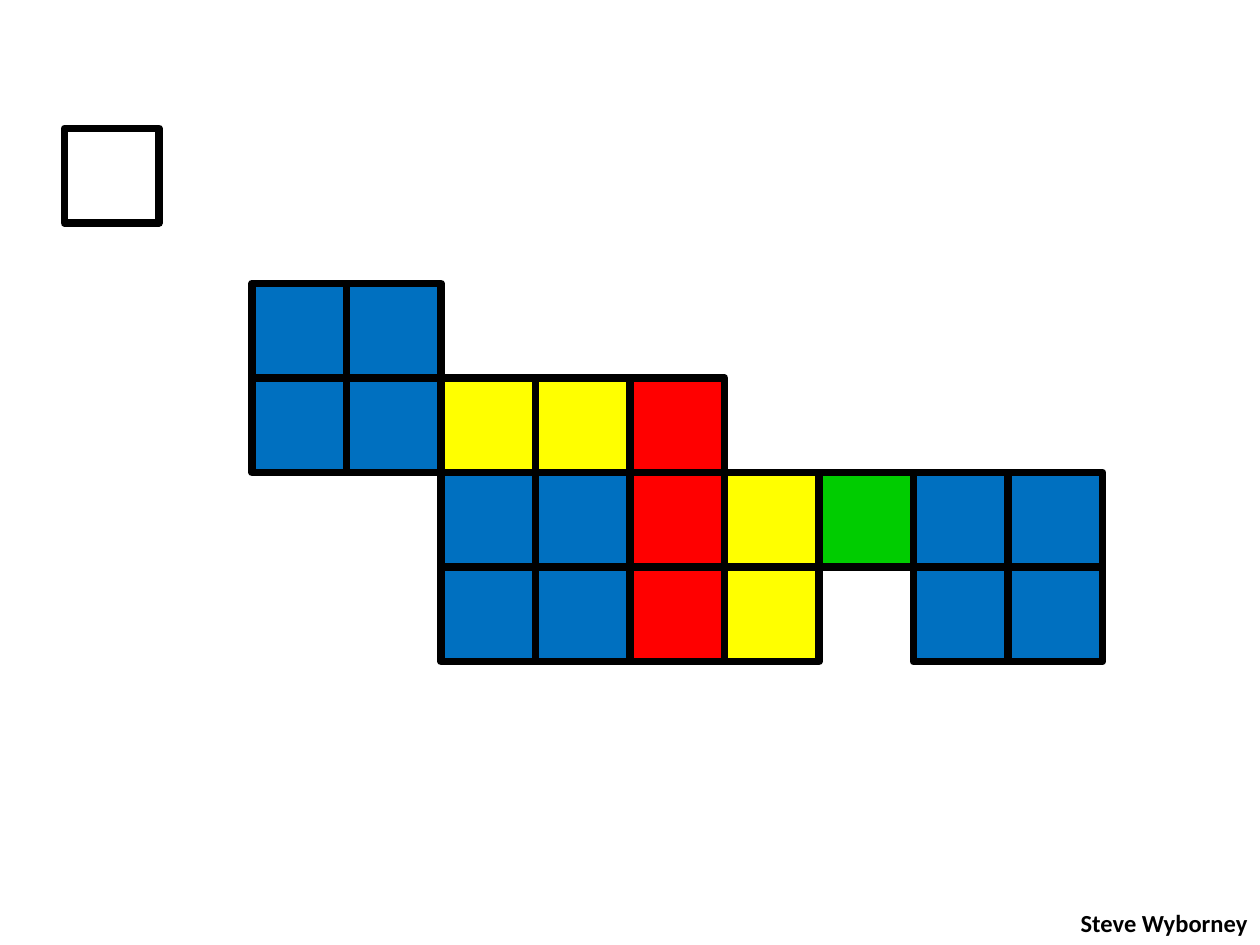
import dataclasses

import pptx
import pptx.dml.color
import pptx.enum.shapes
import pptx.enum.text
import pptx.util

Cm = pptx.util.Cm
Pt = pptx.util.Pt
RGB = pptx.dml.color.RGBColor.from_string


@dataclasses.dataclass(frozen=True)
class Theme:
    font: str = "Calibri"
    credit_size: float = 14
    piece_line: float = 2
    grid_line: float = 4.5
    black: str = "000000"
    white: str = "FFFFFF"
    blue: str = "0070C0"
    yellow: str = "FFFF00"
    green: str = "00CC00"
    red: str = "FF0000"


THEME = Theme()
UNIT = Cm(7.62) // 4  # side of one square

# Coloured pieces: column, row, columns wide, rows high, colour
PIECES = [
    (0, 0, 2, 2, THEME.blue),
    (2, 1, 2, 1, THEME.yellow),
    (6, 2, 1, 1, THEME.green),
    (5, 2, 1, 2, THEME.yellow),
    (4, 1, 1, 3, THEME.red),
    (2, 2, 2, 2, THEME.blue),
    (7, 2, 2, 2, THEME.blue),
]


def add_block(shapes, left, top, width, height, fill, line_width):
    """Add a black-edged rectangle; without a fill colour it is see-through."""
    block = shapes.add_shape(
        pptx.enum.shapes.MSO_SHAPE.RECTANGLE, left, top, width, height)
    block.shadow.inherit = False
    if fill:
        block.fill.solid()
        block.fill.fore_color.rgb = RGB(fill)
    else:
        block.fill.background()
    block.line.color.rgb = RGB(THEME.black)
    block.line.width = Pt(line_width)


def add_unit_square(page, left, top):
    add_block(page.shapes, left, top, UNIT, UNIT, THEME.white, THEME.grid_line)


def add_puzzle(page, left, top):
    # Coloured pieces
    pieces = page.shapes.add_group_shape()
    for column, row, wide, high, colour in PIECES:
        add_block(pieces.shapes, left + column * UNIT, top + row * UNIT,
                  wide * UNIT, high * UNIT, colour, THEME.piece_line)

    # One outlined cell for each unit that the pieces cover
    cells = sorted(
        (row + down, column + across)
        for column, row, wide, high, _ in PIECES
        for down in range(high)
        for across in range(wide))
    grid = page.shapes.add_group_shape()
    for row, column in cells:
        add_block(grid.shapes, left + column * UNIT, top + row * UNIT,
                  UNIT, UNIT, None, THEME.grid_line)


def add_credit(page, left, top, width, height):
    box = page.shapes.add_textbox(left, top, width, height)
    frame = box.text_frame
    frame.word_wrap = False
    frame.auto_size = pptx.enum.text.MSO_AUTO_SIZE.SHAPE_TO_FIT_TEXT
    para = frame.paragraphs[0]
    para.alignment = pptx.enum.text.PP_ALIGN.RIGHT
    span = para.add_run()
    span.text = "Steve Wyborney"
    span.font.name = THEME.font
    span.font.size = Pt(THEME.credit_size)
    span.font.bold = True
    span.font.color.rgb = RGB(THEME.black)


def main():
    deck = pptx.Presentation()
    deck.slide_width, deck.slide_height = Cm(25.4), Cm(19.05)
    page = deck.slides.add_slide(deck.slide_layouts[6])
    page.background.fill.solid()
    page.background.fill.fore_color.rgb = RGB(THEME.white)

    add_unit_square(page, Cm(1.3), Cm(2.59))
    add_puzzle(page, Cm(5.08), 3 * UNIT)
    width, height = Cm(3.89), Cm(0.86)
    add_credit(page, deck.slide_width - width, deck.slide_height - height,
               width, height)
    deck.save("out.pptx")


if __name__ == "__main__":
    main()
